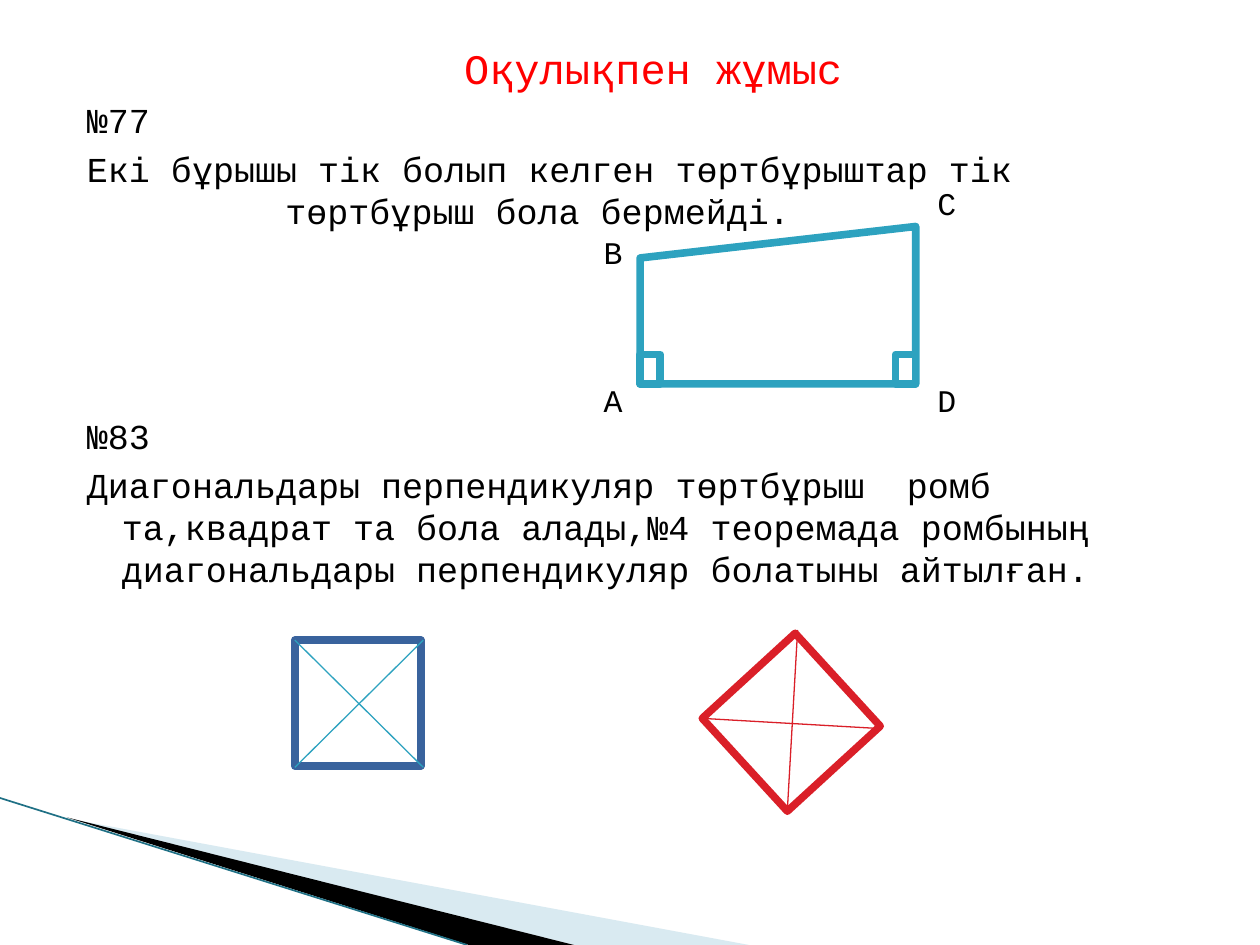
import pptx
import pptx.dml.color
import pptx.enum.shapes
import pptx.enum.text
import pptx.oxml.ns
import pptx.oxml.xmlchemy
import pptx.util

Pt = pptx.util.Pt
RGBColor = pptx.dml.color.RGBColor
Shape = pptx.enum.shapes.MSO_SHAPE
OxmlElement = pptx.oxml.xmlchemy.OxmlElement
qn = pptx.oxml.ns.qn

BLACK = RGBColor(0x00, 0x00, 0x00)
WHITE = RGBColor(0xFF, 0xFF, 0xFF)
TITLE_RED = RGBColor(0xFF, 0x00, 0x00)
TEAL = RGBColor(0x2D, 0xA2, 0xBF)
DARK_TEAL = RGBColor(0x1F, 0x70, 0x85)
PALE_BLUE = RGBColor(0xA0, 0xCB, 0xDC)
BLUE = RGBColor(0x39, 0x63, 0x9D)
RED = RGBColor(0xDA, 0x1F, 0x28)

deck = pptx.Presentation()
deck.slide_width, deck.slide_height = Pt(720), Pt(540)
slide = deck.slides.add_slide(deck.slide_layouts[5])
shapes = slide.shapes


def set_text(holder, paragraphs, size, color, line_height=None):
    """Fill a text holder with (text, hanging indent) paragraphs."""
    frame = holder.text_frame
    frame_format = {
        "word_wrap": True,
        "auto_size": pptx.enum.text.MSO_AUTO_SIZE.NONE,
        "vertical_anchor": pptx.enum.text.MSO_ANCHOR.TOP,
        "margin_left": 0, "margin_right": 0, "margin_top": 0, "margin_bottom": 0,
    }
    for key, value in frame_format.items():
        setattr(frame, key, value)
    for index, (text, hanging) in enumerate(paragraphs):
        paragraph = frame.paragraphs[0] if index == 0 else frame.add_paragraph()
        paragraph.text = text
        if hanging:
            properties = paragraph._p.get_or_add_pPr()
            properties.set("marL", str(Pt(hanging)))
            properties.set("indent", str(-Pt(hanging)))
        if line_height:
            paragraph.line_spacing = Pt(line_height)
        if index:
            paragraph.space_before = Pt(4)
        for key, value in {"name": "Courier New", "size": Pt(size), "bold": False}.items():
            setattr(paragraph.font, key, value)
        paragraph.font.color.rgb = color


def add_line(start, end, color, width):
    line = shapes.add_connector(pptx.enum.shapes.MSO_CONNECTOR.STRAIGHT,
                                *(Pt(value) for value in start + end))
    line.line.color.rgb = color
    line.line.width = Pt(width)
    line._element.spPr.append(OxmlElement("a:effectLst"))


# Corner wedges and their edge line
wedges = [
    ([(39.6, 468.4), (427.5, 540), (328.3, 540)], PALE_BLUE, 40),
    ([(38.2, 467.3), (327.5, 540), (267.8, 540)], BLACK, 100),
]
for corners, color, opacity in wedges:
    builder = shapes.build_freeform(*corners[0], scale=Pt(1))
    builder.add_line_segments(corners[1:], close=True)
    wedge = builder.convert_to_shape()
    wedge.shadow.inherit = False
    wedge.fill.solid()
    wedge.fill.fore_color.rgb = color
    wedge.line.fill.background()
    if opacity < 100:
        alpha = OxmlElement("a:alpha")
        alpha.set("val", str(opacity * 1000))
        wedge._element.spPr.find(".//" + qn("a:srgbClr")).append(alpha)
add_line((0, 456), (267, 540), DARK_TEAL, 0.95)

# Heading and the two exercises
title = shapes.title
title.left, title.top, title.width, title.height = Pt(49.7), Pt(24), Pt(647), Pt(29)
set_text(title, [("Оқулықпен жұмыс", 0)], 24, TITLE_RED)
title.text_frame.paragraphs[0].alignment = pptx.enum.text.PP_ALIGN.CENTER

exercises = [
    (56.5, 76, [
        ("№77", 20),
        ("Екі бұрышы тік болып келген төртбұрыштар тік төртбұрыш бола бермейді.", 113.4),
    ]),
    (237, 100, [
        ("№83", 20),
        ("Диагональдары перпендикуляр төртбұрыш  ромб та,квадрат та бола алады,"
         "№4 теоремада ромбының диагональдары перпендикуляр болатыны айтылған.", 20),
    ]),
]
for top, height, paragraphs in exercises:
    exercise = shapes.add_textbox(Pt(49.7), Pt(top), Pt(640), Pt(height))
    set_text(exercise, paragraphs, 20, BLACK, line_height=24)

# Quadrilateral with its right angles, then the square and the rhombus
figures = [
    (Shape.FLOWCHART_MANUAL_INPUT, 365.8, 129.4, 157.5, 90, TEAL, 0),
    (Shape.RECTANGLE, 511.8, 202.5, 11.5, 16.9, TEAL, 0),
    (Shape.RECTANGLE, 365.8, 202.5, 11.5, 16.9, TEAL, 0),
    (Shape.RECTANGLE, 168.5, 365.8, 72, 72, BLUE, 0),
    (Shape.RECTANGLE, 416.2, 376.7, 72, 72, RED, 317.5),
]
for kind, left, top, width, height, color, rotation in figures:
    figure = shapes.add_shape(kind, Pt(left), Pt(top), Pt(width), Pt(height))
    figure.rotation = rotation
    figure.shadow.inherit = False
    figure.fill.solid()
    figure.fill.fore_color.rgb = WHITE
    figure.line.color.rgb = color
    figure.line.width = Pt(4.33)
    figure.line._get_or_add_ln().append(OxmlElement("a:round"))

vertices = [("A", 344.9, 217.5), ("D", 535.7, 217.5), ("B", 344.9, 133.2), ("C", 535.7, 105.1)]
for letter, left, top in vertices:
    vertex = shapes.add_textbox(Pt(left), Pt(top), Pt(15), Pt(22))
    set_text(vertex, [(letter, 0)], 18, BLACK)

diagonals = [
    ((168.5, 365.8), (241.9, 438.5), TEAL),
    ((168.5, 438.5), (241.9, 365.8), TEAL),
    ((399.6, 410.4), (500.4, 416.2), RED),
    ((450, 461.5), (455.8, 360), RED),
]
for start, end, color in diagonals:
    add_line(start, end, color, 0.75)

deck.save("out.pptx")
